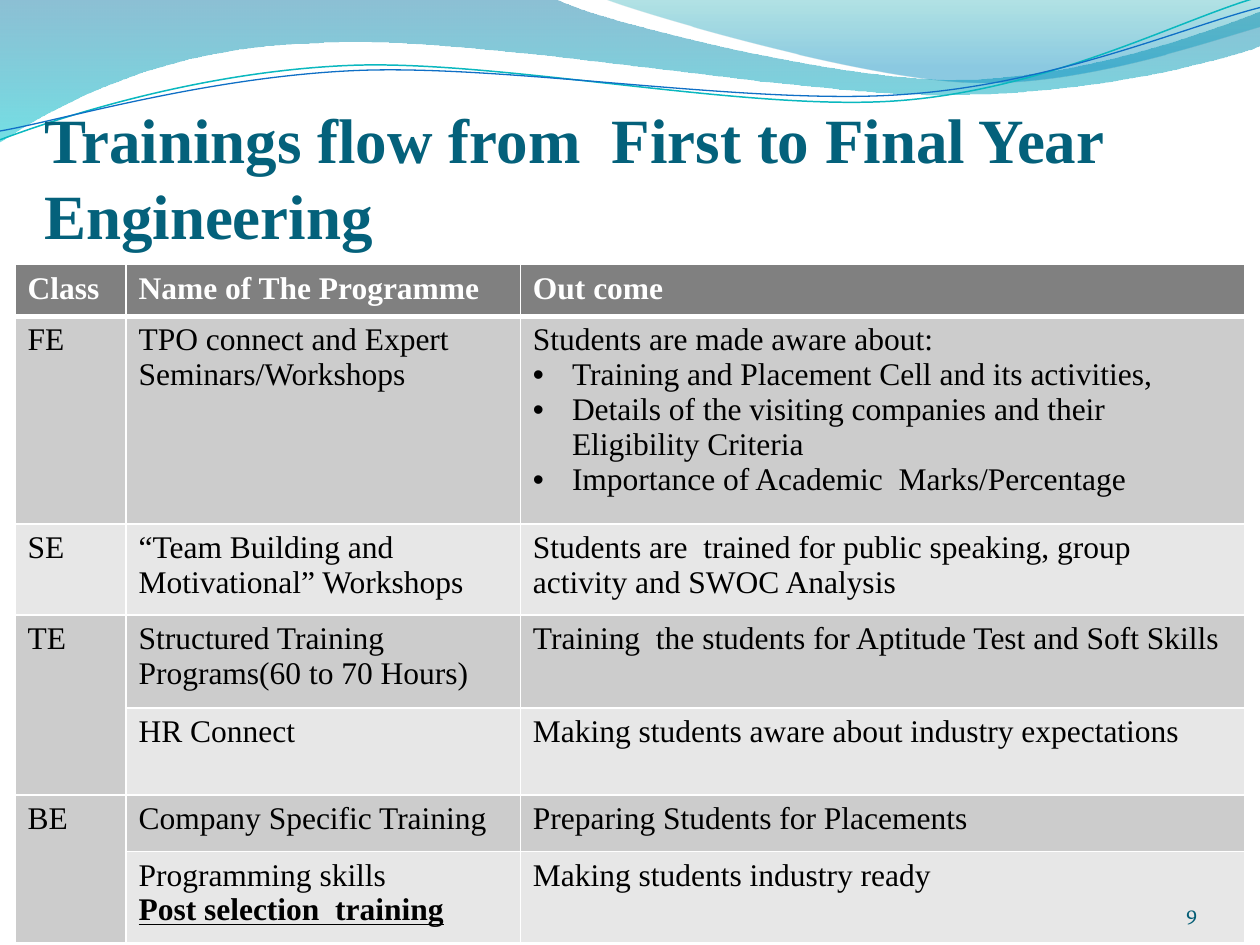
from dataclasses import dataclass

import lxml.etree
import pptx
import pptx.dml.color
import pptx.enum.text
import pptx.oxml.ns
import pptx.util

Inches = pptx.util.Inches
Pt = pptx.util.Pt
Align = pptx.enum.text.PP_ALIGN
qn = pptx.oxml.ns.qn


@dataclass(frozen=True)
class Theme:
    title_color: str = "04617B"
    number_color: str = "045D75"
    white: str = "FFFFFF"
    black: str = "000000"
    header_fill: str = "808080"
    dark_band: str = "CCCCCC"
    light_band: str = "E7E7E7"
    teal_line: str = "0AB8BF"
    blue_line: str = "0F6FC6"
    wide_wave: tuple = ((0, "0074A1", 45), (1, "00C6CF", 55))
    right_wave: tuple = ((0, "00A1A9", 30), (0.8, "008BBF", 45))
    font: str = "Times New Roman"
    number_font: str = "Vollkorn"
    title_size: int = 36
    table_size: int = 18
    number_size: int = 12


THEME = Theme()

WIDE_WAVE = [
    [(0, 0)], [(4.4, -0.01)],
    [(4.76, 0.17), (6.64, 0.63), (7.58, 0.63)],
    [(8.53, 0.63), (9.58, 0.26), (10, 0.09)],
    [(10.01, 0.36)],
    [(9.83, 0.44), (8.7, 0.76), (7.46, 0.75)],
    [(6.22, 0.75), (3.82, 0.28), (2.57, 0.34)],
    [(1.29, 0.36), (0.46, 0.83), (-0.01, 1.13)],
]
RIGHT_WAVE = [
    [(4.79, -0.01)],
    [(5.09, 0.11), (6.82, 0.62), (7.69, 0.65)],
    [(8.56, 0.69), (9.61, 0.32), (10, 0.21)],
    [(10, 0)],
]
TEAL_CURVE = [
    [(0, 1.11)],
    [(0.48, 0.93), (1.58, 0.57), (2.77, 0.52)],
    [(3.95, 0.47), (5.93, 0.89), (7.13, 0.8)],
    [(8.33, 0.71), (9.38, 0.15), (9.98, -0.02)],
]
BLUE_CURVE = [
    [(0, 1.04)],
    [(0.47, 0.96), (1.64, 0.61), (2.83, 0.56)],
    [(4.03, 0.51), (5.97, 0.84), (7.17, 0.75)],
    [(8.36, 0.67), (9.41, 0.21), (10, 0.06)],
]

COLUMN_WIDTHS = [0.88, 3.13, 5.75]
ROW_HEIGHTS = [0.41, 1.65, 0.72, 0.74, 0.69, 0.45, 0.72]
PROGRAMMES = [
    ("Class", "Name of The Programme", "Out come"),
    ("FE", "TPO connect and Expert Seminars/Workshops",
     ["Students are made aware about:",
      "• Training and Placement Cell and its activities,",
      "• Details of the visiting companies and their Eligibility Criteria",
      "• Importance of Academic  Marks/Percentage"]),
    ("SE", "“Team Building and Motivational” Workshops",
     "Students are  trained for public speaking, group activity and SWOC Analysis"),
    ("TE", "Structured Training Programs(60 to 70 Hours)",
     "Training  the students for Aptitude Test and Soft Skills"),
    (None, "HR Connect", "Making students aware about industry expectations"),
    ("BE", "Company Specific Training", "Preparing Students for Placements"),
    (None, ["Programming skills", "Post selection  training"],
     "Making students industry ready"),
]
EMPHASIZED = "Post selection  training"


def rgb(color):
    return pptx.dml.color.RGBColor.from_string(color)


def write_text(paragraph, text, *, size, color, font=THEME.font, bold=False,
               underline=False, align=Align.LEFT):
    paragraph.alignment = align
    run = paragraph.add_run()
    run.text = text
    run.font.name = font
    run.font.size = Pt(size)
    run.font.bold = bold
    run.font.underline = underline
    run.font.color.rgb = rgb(color)


def set_frame(frame, top_inset=0):
    frame.word_wrap = True
    frame.auto_size = pptx.enum.text.MSO_AUTO_SIZE.NONE
    frame.vertical_anchor = pptx.enum.text.MSO_ANCHOR.BOTTOM
    frame.margin_left = frame.margin_right = frame.margin_bottom = 0
    frame.margin_top = Inches(top_inset)


def bend_segments(shape, segments):
    lines = list(shape._element.iter(qn("a:lnTo")))
    for line, segment in zip(lines, segments[1:]):
        if len(segment) == 1:
            continue
        curve = lxml.etree.Element(qn("a:cubicBezTo"))
        for x, y in segment:
            lxml.etree.SubElement(curve, qn("a:pt"), x=str(Inches(x) - shape.left),
                                  y=str(Inches(y) - shape.top))
        line.getparent().replace(line, curve)


def add_outline(slide, segments, closed):
    corners = [(Inches(x), Inches(y)) for x, y in (segment[-1] for segment in segments)]
    builder = slide.shapes.build_freeform(*corners[0], scale=1.0)
    builder.add_line_segments(corners[1:], close=closed)
    shape = builder.convert_to_shape()
    shape.shadow.inherit = False
    bend_segments(shape, segments)
    return shape


def add_wave(slide, segments, stops):
    shape = add_outline(slide, segments, True)
    shape.line.fill.background()
    shape.fill.gradient()
    shape.fill.gradient_angle = 270
    for gradient_stop, (position, color, _) in zip(shape.fill.gradient_stops, stops):
        gradient_stop.position = position
        gradient_stop.color.rgb = rgb(color)
    for element, (_, _, opacity) in zip(shape._element.iter(qn("a:srgbClr")), stops):
        lxml.etree.SubElement(element, qn("a:alpha"), val=str(opacity * 1000))


def add_curve(slide, segments, color, width):
    shape = add_outline(slide, segments, False)
    shape.fill.background()
    shape.line.color.rgb = rgb(color)
    shape.line.width = Pt(width)


def add_title(slide, text):
    title = slide.shapes.title
    title.left, title.top = Inches(0.35), Inches(0.76)
    title.width, title.height = Inches(9.65), Inches(1.24)
    set_frame(title.text_frame, top_inset=0.05)
    write_text(title.text_frame.paragraphs[0], text, size=THEME.title_size,
               color=THEME.title_color, bold=True)
    slide.shapes._spTree.append(title._element)


def add_bullet(paragraph):
    properties = paragraph._p.get_or_add_pPr()
    properties.set("marL", str(Inches(0.31)))
    properties.set("indent", str(-Inches(0.31)))
    lxml.etree.SubElement(properties, qn("a:buFont"), typeface="Arial")
    lxml.etree.SubElement(properties, qn("a:buChar"), char="•")


def style_cell(cell, fill, bottom_width):
    properties = cell._tc.get_or_add_tcPr()
    for side, width in (("L", 1), ("R", 1), ("T", 1), ("B", bottom_width)):
        border = lxml.etree.SubElement(properties, qn(f"a:ln{side}"), w=str(Pt(width)))
        solid = lxml.etree.SubElement(border, qn("a:solidFill"))
        lxml.etree.SubElement(solid, qn("a:srgbClr"), val=THEME.white)
    cell.fill.solid()
    cell.fill.fore_color.rgb = rgb(fill)


def fill_cell(cell, content, header):
    lines = [content] if isinstance(content, str) else content
    frame = cell.text_frame
    for index, line in enumerate(lines):
        paragraph = frame.add_paragraph() if index else frame.paragraphs[0]
        emphasized = line == EMPHASIZED
        write_text(paragraph, line.removeprefix("• "), size=THEME.table_size,
                   color=THEME.white if header else THEME.black,
                   bold=header or emphasized, underline=emphasized)
        if line.startswith("• "):
            add_bullet(paragraph)


def add_programme_table(slide):
    table = slide.shapes.add_table(
        len(ROW_HEIGHTS), len(COLUMN_WIDTHS), Inches(0.12), Inches(2.1),
        Inches(sum(COLUMN_WIDTHS)), Inches(sum(ROW_HEIGHTS))).table
    for column, width in zip(table.columns, COLUMN_WIDTHS):
        column.width = Inches(width)
    for row_index, (height, contents) in enumerate(zip(ROW_HEIGHTS, PROGRAMMES)):
        table.rows[row_index].height = Inches(height)
        header = row_index == 0
        band = THEME.dark_band if row_index % 2 else THEME.light_band
        for column_index, content in enumerate(contents):
            cell = table.cell(row_index, column_index)
            style_cell(cell, THEME.header_fill if header else band, 3 if header else 1)
            if content is None:
                table.cell(row_index - 1, column_index).merge(cell)
            else:
                fill_cell(cell, content, header)


def add_slide_number(slide, number):
    box = slide.shapes.add_textbox(Inches(8.67), Inches(6.95), Inches(0.83), Inches(0.4))
    set_frame(box.text_frame)
    write_text(box.text_frame.paragraphs[0], number, size=THEME.number_size,
               color=THEME.number_color, font=THEME.number_font, align=Align.RIGHT)


def main():
    presentation = pptx.Presentation()
    presentation.slide_width, presentation.slide_height = Inches(10), Inches(7.5)
    slide = presentation.slides.add_slide(presentation.slide_layouts[5])
    add_wave(slide, WIDE_WAVE, THEME.wide_wave)
    add_wave(slide, RIGHT_WAVE, THEME.right_wave)
    add_curve(slide, TEAL_CURVE, THEME.teal_line, 0.85)
    add_curve(slide, BLUE_CURVE, THEME.blue_line, 0.75)
    add_title(slide, "Trainings flow from  First to Final Year Engineering")
    add_programme_table(slide)
    add_slide_number(slide, "9")
    presentation.save("out.pptx")


if __name__ == "__main__":
    main()
